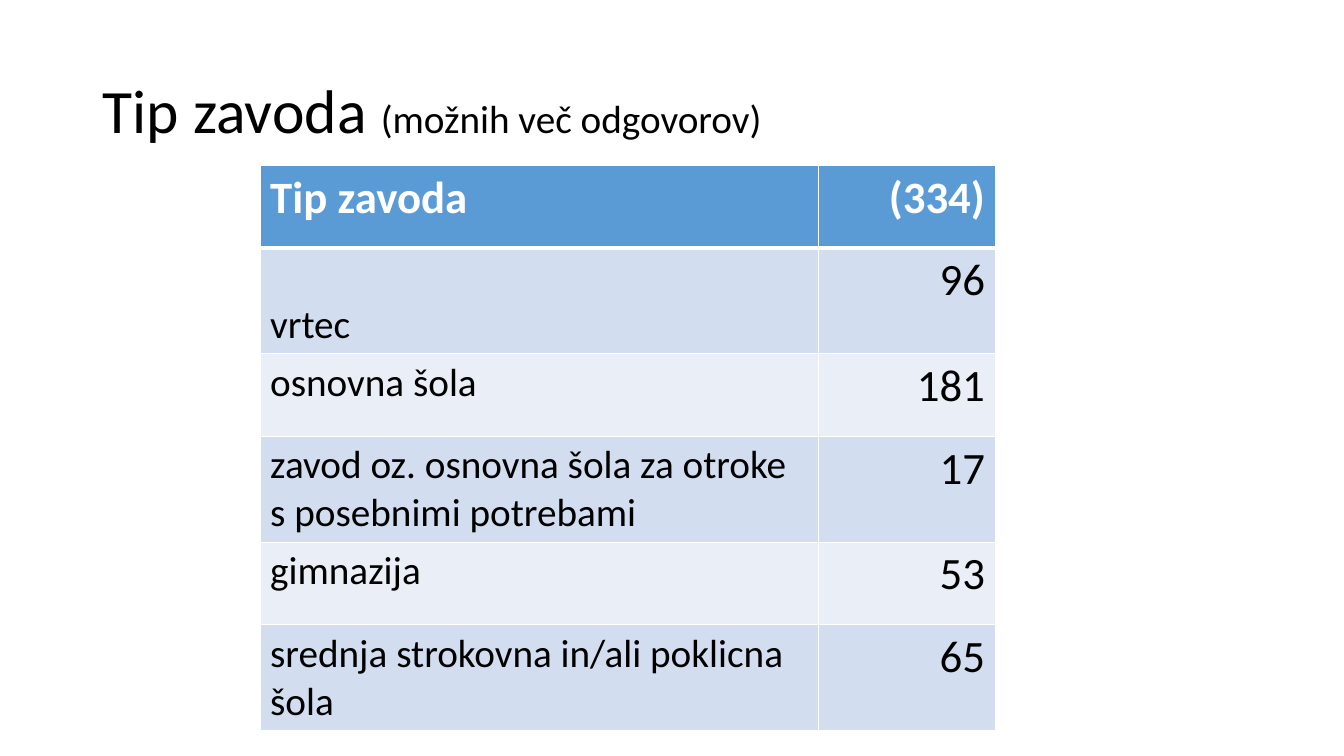
from dataclasses import dataclass

from lxml.etree import SubElement
from pptx import Presentation
from pptx.dml.color import RGBColor
from pptx.enum.text import MSO_ANCHOR as Anchor, PP_ALIGN as Align
from pptx.oxml.ns import qn
from pptx.util import Inches, Pt


@dataclass(frozen=True)
class Theme:
    font: str = "Calibri"
    text: str = "000000"
    white: str = "FFFFFF"
    header: str = "5B9BD5"
    bands: tuple = ("D2DEEF", "EAEFF7")
    title_size: int = 44
    label_size: int = 28
    value_size: int = 32
    rule: int = 1
    header_rule: int = 3


THEME = Theme()
HEADER = ("Tip zavoda", "(334)")
SCHOOLS = [
    ("vrtec", "96"),
    ("osnovna šola", "181"),
    ("zavod oz. osnovna šola za otroke s posebnimi potrebami", "17"),
    ("gimnazija", "53"),
    ("srednja strokovna in/ali poklicna šola", "65"),
]
COLUMN_WIDTHS = (5.54, 1.75)
SINGLE_ROW, DOUBLE_ROW = 0.82, 1.05


def add_run(p, text, size, color=THEME.text, bold=False):
    r = p.add_run()
    r.text = text
    for name, value in {"name": THEME.font, "size": Pt(size), "bold": bold}.items():
        setattr(r.font, name, value)
    r.font.color.rgb = RGBColor.from_string(color)


def add_title(s, left, top, width, height):
    tf = s.shapes.add_textbox(*map(Inches, (left, top, width, height))).text_frame
    tf.word_wrap = True
    tf.vertical_anchor = Anchor.MIDDLE
    p = tf.paragraphs[0]
    p.line_spacing = 0.9
    add_run(p, "Tip zavoda ", THEME.title_size)
    add_run(p, "(možnih več odgovorov)", THEME.label_size)


def set_borders(cell, top, bottom):
    tc_pr = cell._tc.get_or_add_tcPr()
    widths = {"lnL": THEME.rule, "lnR": THEME.rule, "lnT": top, "lnB": bottom}
    for side, width in widths.items():
        ln = SubElement(tc_pr, qn(f"a:{side}"), w=str(Pt(width)))
        fill = SubElement(ln, qn("a:solidFill"))
        SubElement(fill, qn("a:srgbClr"), val=THEME.white)


def add_school_table(s, left, top):
    rows = [HEADER, *SCHOOLS]
    heights = [SINGLE_ROW] + [(DOUBLE_ROW, SINGLE_ROW)[i % 2] for i in range(len(SCHOOLS))]
    box = map(Inches, (left, top, sum(COLUMN_WIDTHS), sum(heights)))
    table = s.shapes.add_table(len(rows), len(COLUMN_WIDTHS), *box).table
    for column, width in zip(table.columns, COLUMN_WIDTHS):
        column.width = Inches(width)
    for i, (values, height) in enumerate(zip(rows, heights)):
        table.rows[i].height = Inches(height)
        is_header = i == 0
        for j, text in enumerate(values):
            cell = table.cell(i, j)
            set_borders(cell, THEME.header_rule if i == 1 else THEME.rule,
                        THEME.header_rule if is_header else THEME.rule)
            cell.fill.solid()
            fill = THEME.header if is_header else THEME.bands[(i - 1) % 2]
            cell.fill.fore_color.rgb = RGBColor.from_string(fill)
            p = cell.text_frame.paragraphs[0]
            p.alignment = Align.RIGHT if j else Align.LEFT
            size = THEME.value_size if is_header or j else THEME.label_size
            add_run(p, text, size, THEME.white if is_header else THEME.text, is_header)
    table.cell(1, 0).vertical_anchor = Anchor.BOTTOM


def main():
    prs = Presentation()
    prs.slide_width, prs.slide_height = Inches(13.33), Inches(7.5)
    s = prs.slides.add_slide(prs.slide_layouts[6])
    add_title(s, 0.92, 0.4, 11.5, 1.45)
    add_school_table(s, 2.58, 1.64)
    prs.save("out.pptx")


if __name__ == "__main__":
    main()
